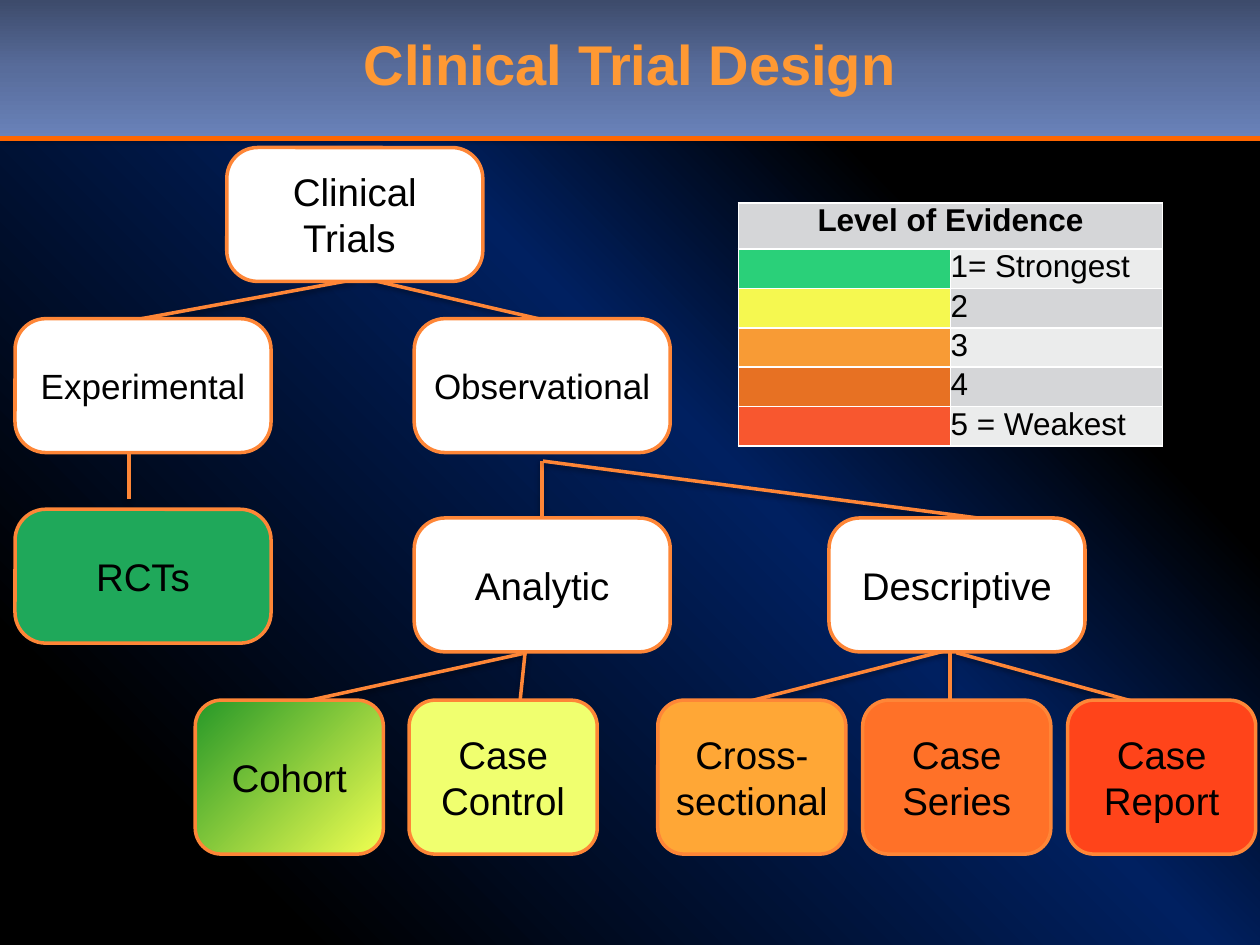
import pptx
import pptx.util
import pptx.oxml
import pptx.oxml.ns
import pptx.dml.color
import pptx.enum.shapes
import pptx.enum.text
from lxml import etree

Pt = pptx.util.Pt
qn = pptx.oxml.ns.qn
ALIGN = pptx.enum.text.PP_ALIGN
MID = pptx.enum.text.MSO_ANCHOR.MIDDLE
SHAPE = pptx.enum.shapes.MSO_SHAPE
NS = pptx.oxml.ns.nsdecls("a")

INK = {
    "black": "000000", "white": "FFFFFF", "navy": "002060",
    "edge": "FE8637", "rule": "FF6600", "title": "FF9933",
    "top": "3D4B6B", "mid": "586C9B", "low": "6982B9",
    "rct": "1FA85A", "lime": "F1FF51", "leaf": "269828",
    "control": "F0FF6F", "cross": "FFA736", "series": "FF7128",
    "report": "FF441A", "grey": "D5D6D8", "pale": "EBECEC",
    "one": "2AD079", "two": "F5F850", "three": "F89B35",
    "four": "E77123", "five": "F8572F",
}


def rgb(name):
    return pptx.dml.color.RGBColor.from_string(INK[name])


class Deck:
    font = "Arial"
    edge = 2

    def __init__(self, wide, high):
        self.prs = pptx.Presentation()
        self.prs.slide_width, self.prs.slide_height = Pt(wide), Pt(high)
        self.slide = self.prs.slides.add_slide(self.prs.slide_layouts[5])
        self.shapes = self.slide.shapes

    def blend(self, fill, root, stops, shade):
        """Give the first fill under root a gradient."""
        fill.solid()
        old = next(root.iter(qn("a:solidFill")))
        marks = "".join(
            f'<a:gs pos="{pos * 1000}"><a:srgbClr val="{INK[name]}"/></a:gs>'
            for pos, name in stops)
        new = pptx.oxml.parse_xml(
            f'<a:gradFill {NS} rotWithShape="1"><a:gsLst>{marks}</a:gsLst>'
            f'{shade}</a:gradFill>')
        old.getparent().replace(old, new)

    def tilt(self, angle):
        return f'<a:lin ang="{angle * 60000}" scaled="0"/>'

    def shade(self, root, alpha, blur, dist):
        """Cast a black shadow straight down."""
        for old in root.findall(qn("a:effectLst")):
            root.remove(old)
        root.append(pptx.oxml.parse_xml(
            f'<a:effectLst {NS}><a:outerShdw blurRad="{Pt(blur)}" '
            f'dist="{Pt(dist)}" dir="5400000" rotWithShape="0">'
            f'<a:srgbClr val="{INK["black"]}"><a:alpha val="{alpha * 1000}"/>'
            '</a:srgbClr></a:outerShdw></a:effectLst>'))

    def style(self, para, size, color="black", bold=False, align=ALIGN.CENTER):
        para.alignment = align
        para.font.name, para.font.size = self.font, Pt(size)
        para.font.bold = bold
        para.font.color.rgb = rgb(color)

    def inset(self, item, gap):
        item.margin_left = item.margin_right = Pt(gap)
        item.margin_top = item.margin_bottom = Pt(gap)

    def back(self, stops, angle):
        self.blend(self.slide.background.fill, self.slide.element,
                   stops, self.tilt(angle))

    def band(self, wide, high, stops):
        box = self.shapes.add_shape(SHAPE.RECTANGLE, 0, 0, Pt(wide), Pt(high))
        self.blend(box.fill, box.element.spPr, stops, self.tilt(90))
        box.line.fill.background()
        self.shade(box.element.spPr, 35, 3, 1.8)

    def title(self, text, wide, high):
        box = self.shapes.title
        box.left = box.top = 0
        box.width, box.height = Pt(wide), Pt(high)
        frame = box.text_frame
        frame.text = text
        frame.vertical_anchor = MID
        self.inset(frame, 3.6)
        para = frame.paragraphs[0]
        para.line_spacing = 0.85
        self.style(para, 32, "title", True)
        self.shade(para.runs[0].font._element
                   if hasattr(para.runs[0].font, "_element")
                   else para.runs[0]._r.get_or_add_rPr(), 100, 0, 3)
        # Bring the title in front of the band
        self.shapes.element.append(box.element)

    def line(self, x1, y1, x2, y2, color="edge", width=edge, cast=True):
        link = self.shapes.add_connector(
            pptx.enum.shapes.MSO_CONNECTOR.STRAIGHT,
            Pt(x1), Pt(y1), Pt(x2), Pt(y2))
        link.line.color.rgb = rgb(color)
        link.line.width = Pt(width)
        if cast:
            self.shade(link.element.spPr, 38, 3, 1.6)
        else:
            etree.SubElement(link.element.spPr, qn("a:effectLst"))

    def node(self, text, x, y, wide, high, fill="white", size=22):
        box = self.shapes.add_shape(
            SHAPE.ROUNDED_RECTANGLE, Pt(x), Pt(y), Pt(wide), Pt(high))
        box.adjustments[0] = 0.23 if high < 80 else 0.17
        box.shadow.inherit = False
        if isinstance(fill, str):
            box.fill.solid()
            box.fill.fore_color.rgb = rgb(fill)
        else:
            self.blend(box.fill, box.element.spPr, fill,
                       '<a:path path="circle"><a:fillToRect l="100000" '
                       't="100000"/></a:path>')
        box.line.color.rgb = rgb("edge")
        box.line.width = Pt(self.edge)
        frame = box.text_frame
        frame.word_wrap = True
        frame.vertical_anchor = MID
        self.inset(frame, 3.6)
        frame.text = text
        self.style(frame.paragraphs[0], size)

    def cell(self, cell, fill, text="", **look):
        cell.fill.solid()
        cell.fill.fore_color.rgb = rgb(fill)
        self.inset(cell, 0)
        cell.text = text
        self.style(cell.text_frame.paragraphs[0], 18, **look)
        props = cell._tc.get_or_add_tcPr()
        for spot, side in enumerate(("lnL", "lnR", "lnT", "lnB")):
            props.insert(spot, pptx.oxml.parse_xml(
                f'<a:{side} {NS} w="{Pt(1)}"><a:solidFill><a:srgbClr '
                f'val="{INK["white"]}"/></a:solidFill></a:{side}>'))

    def table(self, x, y, wide, head, step, name, rows):
        high = head + step * len(rows)
        grid = self.shapes.add_table(
            len(rows) + 1, 2, Pt(x), Pt(y), Pt(wide), Pt(high)).table
        for row in grid.rows:
            row.height = Pt(step)
        grid.rows[0].height = Pt(head)
        for col in (0, 1):
            self.cell(grid.cell(0, col), "grey", "" if col else name, bold=True)
        grid.cell(0, 0).merge(grid.cell(0, 1))
        for num, (fill, text) in enumerate(rows, 1):
            self.cell(grid.cell(num, 0), fill)
            self.cell(grid.cell(num, 1), "pale" if num % 2 else "grey",
                      text, align=ALIGN.LEFT)


def main():
    deck = Deck(720, 540)

    # Background, header band and title
    deck.back([(14, "black"), (55, "navy"), (75, "black")], 315)
    deck.band(720, 78.5, [(0, "top"), (50, "mid"), (100, "low")])
    deck.line(0, 79.2, 720, 79.2, "rule", 3, False)
    deck.title("Clinical Trial Design", 720, 78.5)

    # Branches, drawn behind the boxes
    for ends in (
        (309.6, 299.5, 309.6, 263.5), (69, 184.3, 202.3, 159.8),
        (311, 182.9, 202.3, 157.7), (569.5, 297.4, 310.3, 263.5),
        (421.2, 402.5, 553, 368.6), (542.9, 412.6, 542.9, 367.9),
        (671.8, 407.5, 546.5, 373), (166.3, 402.5, 301, 373),
        (295.2, 419.8, 300.2, 371.5), (73.7, 285.1, 73.7, 258.5),
    ):
        deck.line(*ends)

    # Study types
    for text, x, y, fill, size in (
        ("Clinical Trials ", 129.6, 84.3, "white", 22),
        ("Experimental", 8.6, 182.1, "white", 20),
        ("Observational", 236.7, 182.1, "white", 20),
        ("RCTs", 8.6, 291, "rct", 22),
        ("Analytic", 236.7, 296, "white", 22),
        ("Descriptive", 473.7, 296, "white", 22),
    ):
        deck.node(text, x, y, 146.3, 76.5, fill, size)

    # Study designs
    for text, x, fill in (
        ("Cohort", 111.6, [(0, "lime"), (100, "leaf")]),
        ("Case Control", 233.8, "control"),
        ("Cross-sectional", 375.9, "cross"),
        ("Case Series", 493, "series"),
        ("Case Report", 610.1, "report"),
    ):
        deck.node(text, x, 400.1, 107.5, 88, fill)

    # Evidence key
    deck.table(422, 115.9, 242.4, 26.5, 22.5, "Level of Evidence", [
        ("one", "1= Strongest"), ("two", "2"), ("three", "3"),
        ("four", "4"), ("five", "5 = Weakest")])

    deck.prs.save("out.pptx")


if __name__ == "__main__":
    main()
